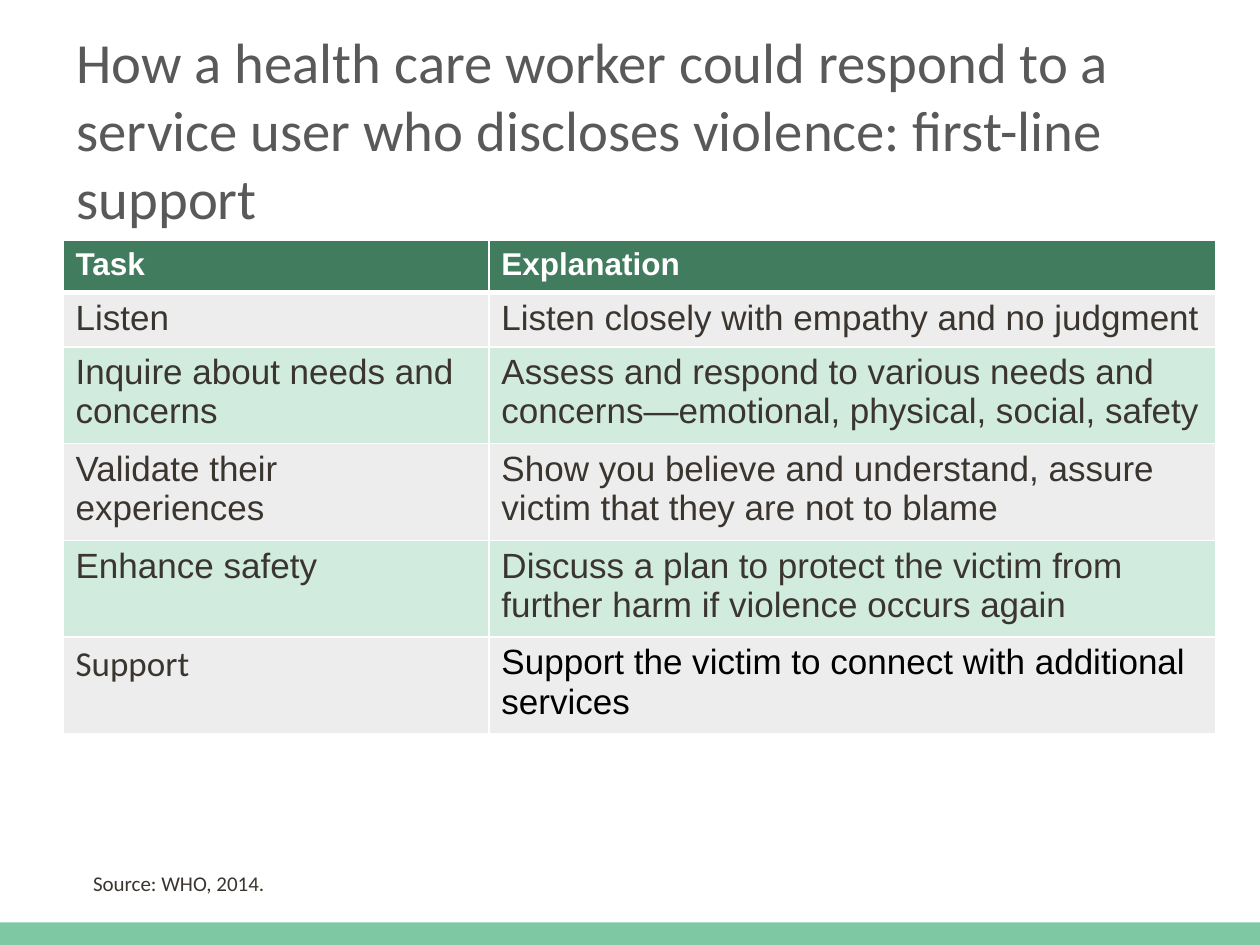
from lxml.etree import SubElement
from pptx import Presentation
from pptx.dml.color import RGBColor
from pptx.enum.shapes import MSO_SHAPE
from pptx.enum.text import MSO_ANCHOR
from pptx.oxml.ns import qn
from pptx.util import Inches, Pt

DARK_TEXT = "3B352F"
ROW_FILLS = ["EDEDED", "D1EBDE"]
TASKS = [
    ("Task", "Explanation"),
    ("Listen", "Listen closely with empathy and no judgment"),
    ("Inquire about needs and concerns",
     "Assess and respond to various needs and concerns—emotional, physical, social, safety"),
    ("Validate their experiences",
     "Show you believe and understand, assure victim that they are not to blame"),
    ("Enhance safety",
     "Discuss a plan to protect the victim from further harm if violence occurs again"),
    ("Support", "Support the victim to connect with additional services"),
]


def color(hex_string):
    return RGBColor.from_string(hex_string)


def add_text(frame, text, size, font_name, hex_string, bold=False):
    frame.word_wrap = True
    run = frame.paragraphs[0].add_run()
    run.text = text
    run.font.size = Pt(size)
    run.font.name = font_name
    run.font.bold = bold
    run.font.color.rgb = color(hex_string)


presentation = Presentation()
presentation.slide_width = Inches(10)
presentation.slide_height = Inches(7.5)
slide = presentation.slides.add_slide(presentation.slide_layouts[6])

# Footer band
band = slide.shapes.add_shape(
    MSO_SHAPE.RECTANGLE, Inches(0), Inches(7.32), Inches(10.05), Inches(0.21))
band.shadow.inherit = False
band.fill.solid()
band.fill.fore_color.rgb = color("7EC9A3")
band.line.fill.background()

# Title and source
title = slide.shapes.add_textbox(Inches(0.51), Inches(0.49), Inches(8.99), Inches(1.06))
title.text_frame.vertical_anchor = MSO_ANCHOR.MIDDLE
add_text(title.text_frame,
         "How a health care worker could respond to a service user who discloses violence: "
         "first-line support", 32.4, "Calibri", "595959")

source = slide.shapes.add_textbox(Inches(0.64), Inches(6.86), Inches(4.74), Inches(0.3))
add_text(source.text_frame, "Source: WHO, 2014.", 12, "Calibri", DARK_TEXT)

# Task table
row_height = Inches(0.41)
table = slide.shapes.add_table(
    len(TASKS), 2, Inches(0.5), Inches(1.91), Inches(9.15), row_height * len(TASKS)).table
table.columns[0].width = Inches(3.38)
table.columns[1].width = Inches(5.77)

for row_index, row_texts in enumerate(TASKS):
    table.rows[row_index].height = row_height
    is_header = row_index == 0
    is_last = row_index == len(TASKS) - 1
    for column_index, text in enumerate(row_texts):
        cell = table.cell(row_index, column_index)

        cell_properties = cell._tc.get_or_add_tcPr()
        for side in ("L", "R", "T", "B"):
            thick = (is_header and side == "B") or (row_index == 1 and side == "T")
            border = SubElement(cell_properties, qn(f"a:ln{side}"), w=str(Pt(3 if thick else 1)))
            border_fill = SubElement(border, qn("a:solidFill"))
            SubElement(border_fill, qn("a:srgbClr"), val="FFFFFF")

        cell.fill.solid()
        cell.fill.fore_color.rgb = color("427C5F" if is_header else ROW_FILLS[(row_index - 1) % 2])

        if is_header:
            add_text(cell.text_frame, text, 18, "Arial", "FFFFFF", bold=True)
        elif is_last and column_index == 0:
            add_text(cell.text_frame, text, 20, "Calibri", DARK_TEXT)
        else:
            add_text(cell.text_frame, text, 20, "Arial", "000000" if is_last else DARK_TEXT)

presentation.save("out.pptx")
